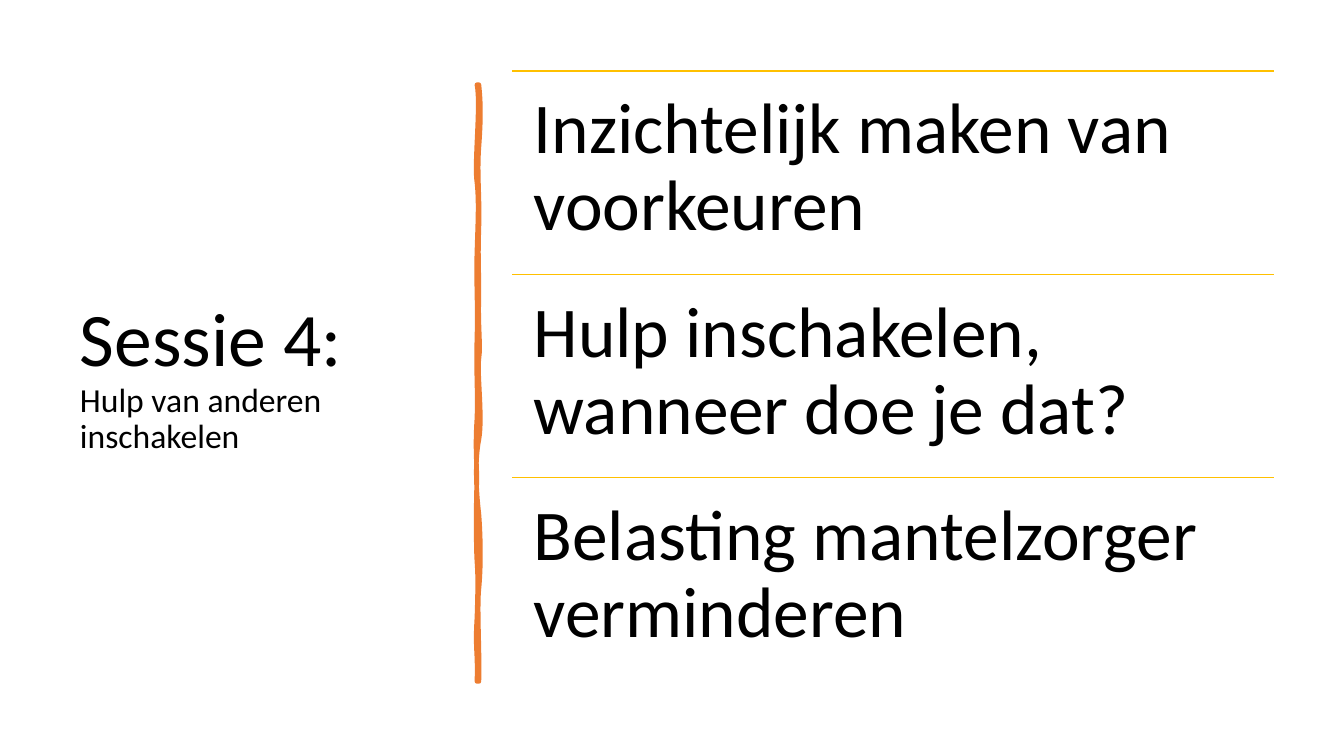
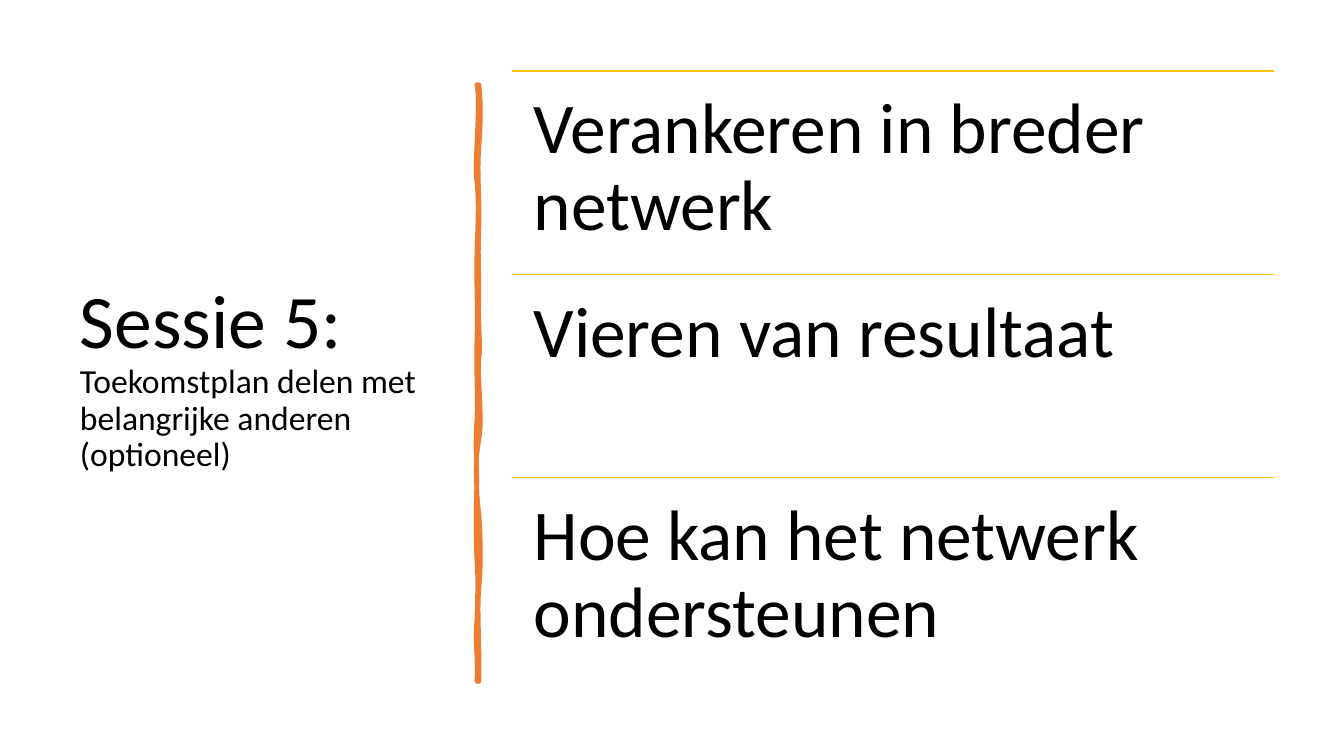
import dataclasses

import lxml.etree
import pptx
import pptx.dml.color
import pptx.enum.shapes
import pptx.enum.text
import pptx.oxml.ns
import pptx.slide
import pptx.text.text
import pptx.util

INK = {"text": "000000", "brush": "ED7D31", "rule": "FFC000"}
FONT = "Calibri"
WIDE, HIGH = 13.33, 7.5
TOP = HIGH * 9.4 / 100
LEFT, SPAN = WIDE * 38.13 / 100, 7.55
ROW = 6.05 / 3
PAD = 0.21
UNIT = 1000

START = (4.75, 0.84)
CURVES = (
    ((4.77, 1.02), (4.77, 1.19), (4.75, 1.46)),
    ((4.73, 1.73), (4.76, 1.95), (4.75, 2.26)),
    ((4.74, 2.57), (4.75, 2.62), (4.75, 2.94)),
    ((4.74, 3.25), (4.77, 3.42), (4.75, 3.56)),
    ((4.73, 3.7), (4.79, 4.14), (4.75, 4.36)),
    ((4.71, 4.57), (4.72, 4.84), (4.75, 5.1)),
    ((4.77, 5.36), (4.77, 5.64), (4.75, 5.84)),
    ((4.73, 6.03), (4.76, 6.5), (4.75, 6.76)),
    ((4.74, 6.76), (4.73, 6.76), (4.73, 6.76)),
    ((4.74, 6.46), (4.71, 6.44), (4.73, 6.13)),
    ((4.74, 5.83), (4.74, 5.7), (4.73, 5.57)),
    ((4.72, 5.44), (4.72, 4.95), (4.73, 4.77)),
    ((4.73, 4.59), (4.71, 4.45), (4.73, 4.15)),
    ((4.74, 3.86), (4.72, 3.73), (4.73, 3.35)),
    ((4.74, 2.98), (4.72, 2.81), (4.73, 2.5)),
    ((4.74, 2.18), (4.75, 2), (4.73, 1.81)),
    ((4.7, 1.63), (4.77, 1.04), (4.73, 0.84)),
)


@dataclasses.dataclass(frozen=True)
class Lesson:
    head: str
    theme: str
    goals: tuple[str, ...]


LESSONS = (
    Lesson(
        "Sessie 4: ",
        "Hulp van anderen inschakelen",
        (
            "Inzichtelijk maken van voorkeuren",
            "Hulp inschakelen, wanneer doe je dat?",
            "Belasting mantelzorger verminderen",
        ),
    ),
    Lesson(
        "Sessie 5: ",
        "Toekomstplan delen met belangrijke anderen (optioneel)",
        (
            "Verankeren in breder netwerk",
            "Vieren van resultaat",
            "Hoe kan het netwerk ondersteunen",
        ),
    ),
)


def inch(size: float) -> int:
    return pptx.util.Inches(size)


def tint(name: str) -> pptx.dml.color.RGBColor:
    return pptx.dml.color.RGBColor.from_string(INK[name])


def add_run(para: pptx.text.text._Paragraph, text: str, size: float) -> None:
    run = para.add_run()
    run.text = text
    run.font.name = FONT
    run.font.size = pptx.util.Pt(size)
    run.font.color.rgb = tint("text")


def set_para(para: pptx.text.text._Paragraph) -> None:
    para.alignment = pptx.enum.text.PP_ALIGN.LEFT
    para.line_spacing = 0.9


def set_layout(layout: pptx.slide.SlideLayout) -> None:
    title = layout.placeholders[0]
    title.left, title.top = inch(WIDE * 5.2 / 100), inch(0.7)
    title.width, title.height = inch(3.74), inch(6.11)
    frame = title.text_frame
    frame.auto_size = pptx.enum.text.MSO_AUTO_SIZE.NONE
    frame.vertical_anchor = pptx.enum.text.MSO_ANCHOR.MIDDLE


def add_title(slide: pptx.slide.Slide, lesson: Lesson) -> None:
    para = slide.shapes.title.text_frame.paragraphs[0]
    set_para(para)
    add_run(para, lesson.head, 54)
    para.add_line_break()
    add_run(para, lesson.theme, 24)


def scaled(point: tuple[float, float]) -> tuple[int, int]:
    return round(point[0] * UNIT), round(point[1] * UNIT)


def bend(brush: pptx.shapes.autoshape.Shape) -> None:
    qn = pptx.oxml.ns.qn
    ends = [scaled(START)] + [scaled(curve[-1]) for curve in CURVES]
    west = min(x for x, y in ends)
    north = min(y for x, y in ends)
    lines = list(brush._element.iter(qn("a:lnTo")))
    for line, curve in zip(lines, CURVES):
        arc = lxml.etree.Element(qn("a:cubicBezTo"))
        for x, y in map(scaled, curve):
            spot = lxml.etree.SubElement(arc, qn("a:pt"))
            spot.set("x", str(x - west))
            spot.set("y", str(y - north))
        line.getparent().replace(line, arc)


def add_brush(slide: pptx.slide.Slide) -> None:
    x, y = scaled(START)
    pen = slide.shapes.build_freeform(x, y, scale=inch(1) / UNIT)
    pen.add_line_segments([scaled(curve[-1]) for curve in CURVES], close=True)
    brush = pen.convert_to_shape()
    bend(brush)
    brush.shadow.inherit = False
    brush.fill.solid()
    brush.fill.fore_color.rgb = tint("brush")
    brush.line.color.rgb = tint("brush")
    brush.line.width = pptx.util.Pt(3.25)


def add_rule(slide: pptx.slide.Slide, top: float) -> None:
    rule = slide.shapes.add_connector(
        pptx.enum.shapes.MSO_CONNECTOR.STRAIGHT,
        inch(LEFT), inch(top), inch(LEFT + SPAN), inch(top),
    )
    rule.line.color.rgb = tint("rule")
    rule.line.width = pptx.util.Pt(1)
    props = rule._element.spPr
    lxml.etree.SubElement(props, pptx.oxml.ns.qn("a:effectLst"))


def add_goal(slide: pptx.slide.Slide, text: str, top: float) -> None:
    box = slide.shapes.add_textbox(inch(LEFT), inch(top), inch(SPAN), inch(ROW))
    frame = box.text_frame
    frame.word_wrap = True
    frame.margin_left = frame.margin_right = inch(PAD)
    frame.margin_top = frame.margin_bottom = inch(PAD)
    para = frame.paragraphs[0]
    set_para(para)
    add_run(para, text, 51)


def main() -> None:
    deck = pptx.Presentation()
    deck.slide_width, deck.slide_height = inch(WIDE), inch(HIGH)
    layout = deck.slide_layouts[5]
    set_layout(layout)
    for lesson in LESSONS:
        slide = deck.slides.add_slide(layout)
        add_title(slide, lesson)
        add_brush(slide)
        for row, goal in enumerate(lesson.goals):
            top = TOP + row * ROW
            add_rule(slide, top)
            add_goal(slide, goal, top)
    deck.save("out.pptx")


if __name__ == "__main__":
    main()
